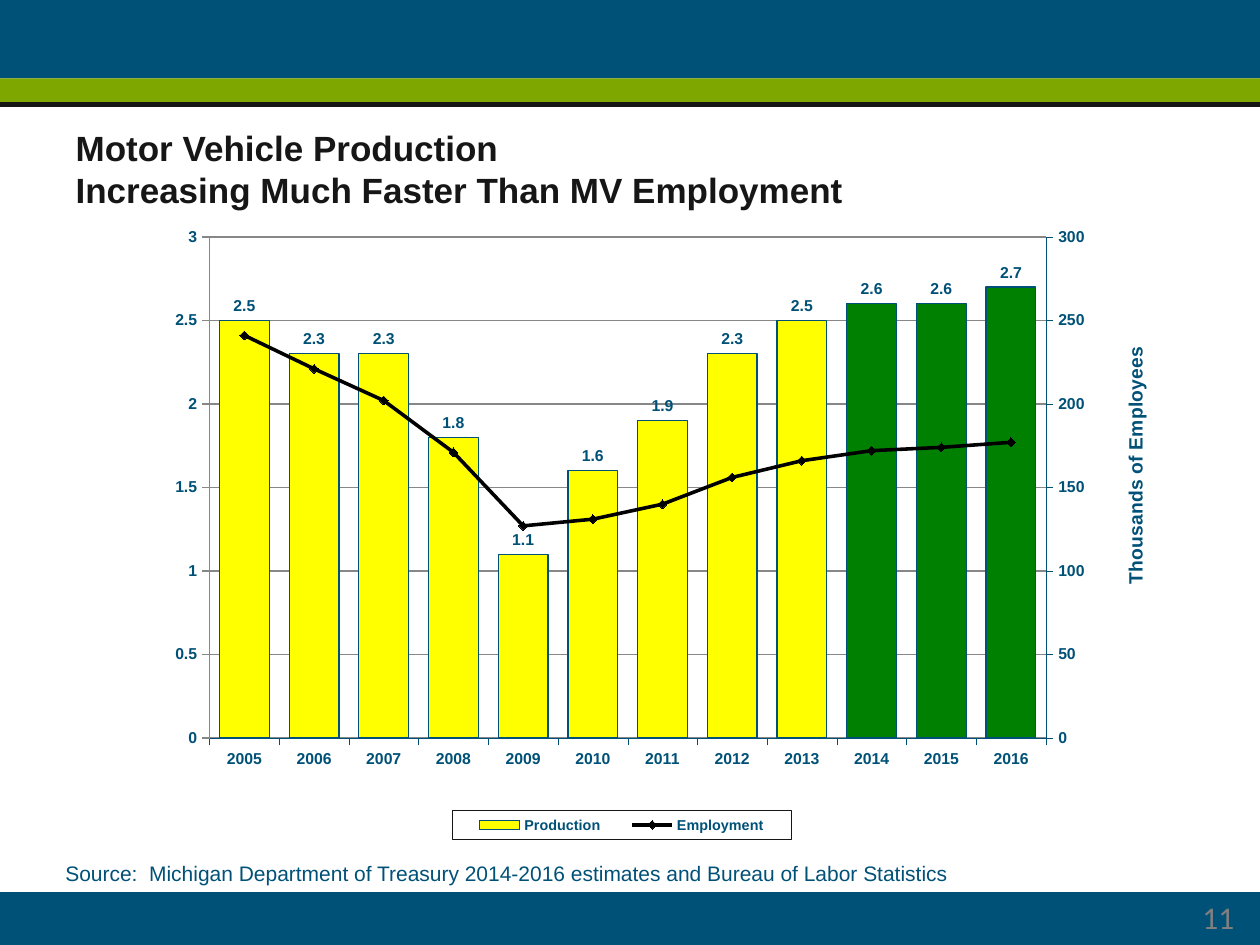
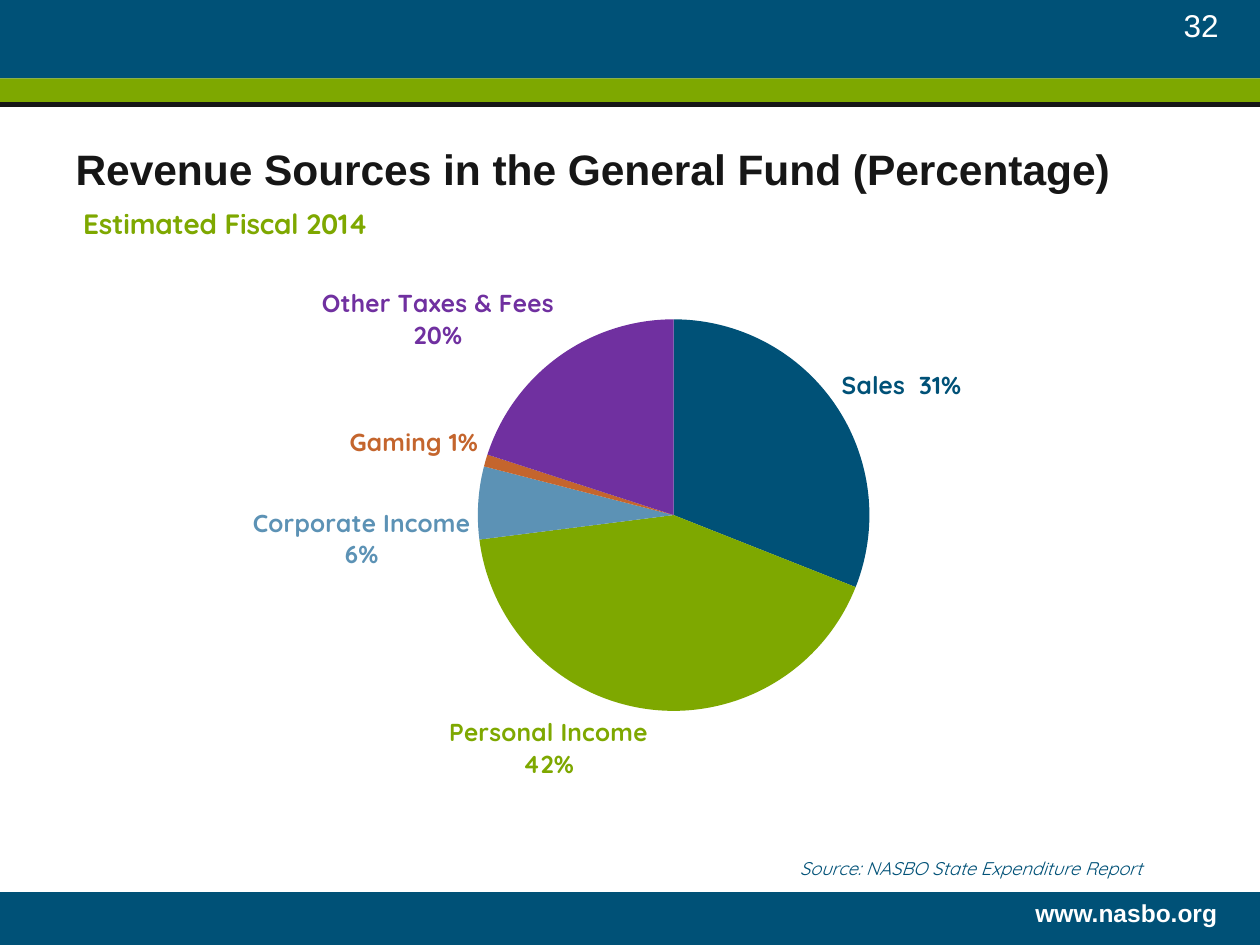
from collections import namedtuple

from pptx import Presentation
from pptx import util as u
from pptx.chart.axis import ValueAxis
from pptx.chart.data import CategoryChartData
from pptx.dml.color import RGBColor
from pptx.enum import chart as ch, shapes, text
from pptx.oxml import parse_xml
from pptx.oxml.ns import nsdecls, qn

COLUMNS, ROWS = 100, 75
NAVY, GREEN, INK, WHITE = "005177", "7EA800", "161616", "FFFFFF"
YELLOW, FOREST, BLACK, GREY = "FFFF00", "008000", "000000", "808080"
RIGHT_AXIS_IDS = (50010, 50020)

Box = namedtuple("Box", "col row cols rows")
HEADER = Box(0, 0, COLUMNS, 8.3)
FOOTER = Box(0, 70.8, COLUMNS, 4.2)
TITLE = Box(5, 9.2, 90, 8.3)

YEARS = [str(year) for year in range(2005, 2017)]
PRODUCTION = [2.5, 2.3, 2.3, 1.8, 1.1, 1.6, 1.9, 2.3, 2.5, 2.6, 2.6, 2.7]
EMPLOYMENT = [241, 221, 202, 171, 127, 131, 140, 156, 166, 172, 174, 177]
FIRST_ESTIMATE = YEARS.index("2014")

REVENUES = [
    ("Sales ", 31, NAVY),
    ("Personal Income", 42, GREEN),
    ("Corporate Income", 6, "5C92B5"),
    ("Gaming", 1, "C4652D"),
    ("Other Taxes & Fees", 20, "7030A0"),
]


def rgb(code):
    """Turn a hex string into a colour."""
    return RGBColor.from_string(code)


def emu(box):
    """Turn a box in grid cells into lengths of the 10 by 7.5 inch slide."""
    return [u.Inches(cells * 10 / COLUMNS) for cells in box]


def set_font(font, size, color, face="Arial", bold=False, italic=False):
    """Format any font object."""
    font.size, font.name = u.Pt(size), face
    font.bold, font.italic = bold, italic
    font.color.rgb = rgb(color)


def write(frame, words, align="LEFT", anchor="TOP", **style):
    """Fill a text frame with one formatted paragraph."""
    frame.word_wrap = True
    frame.auto_size = text.MSO_AUTO_SIZE.NONE
    frame.vertical_anchor = getattr(text.MSO_ANCHOR, anchor)
    paragraph = frame.paragraphs[0]
    paragraph.text = words
    paragraph.alignment = getattr(text.PP_ALIGN, align)
    for run in paragraph.runs:
        set_font(run.font, **style)


def add_words(slide, box, words, **style):
    """Add a text box on the grid."""
    write(slide.shapes.add_textbox(*emu(box)).text_frame, words, **style)


def add_band(slide, box, color):
    """Add a plain filled band."""
    band = slide.shapes.add_shape(shapes.MSO_SHAPE.RECTANGLE, *emu(box))
    band.shadow.inherit = False
    band.fill.solid()
    band.fill.fore_color.rgb = rgb(color)
    band.line.fill.background()
    return band


def add_rule(slide, box, color, width):
    """Draw a line along the bottom edge of a box."""
    left, top, length, height = emu(box)
    bottom = top + height
    rule = slide.shapes.add_connector(
        shapes.MSO_CONNECTOR.STRAIGHT, left, bottom, left + length, bottom)
    rule.line.color.rgb = rgb(color)
    rule.line.width = u.Pt(width)
    rule._element.spPr.append(parse_xml(f"<a:effectLst {nsdecls('a')}/>"))
    return rule


def dress_layout(prs, layout, slide):
    """Give the layout its title style, bands and rule."""
    style = prs.slide_master.element.xpath("p:txStyles/p:titleStyle/a:lvl1pPr")[0]
    style.set("algn", "l")
    style.find(qn("a:defRPr")).set("sz", "2000")
    heading, *extras = list(layout.placeholders)
    heading.left, heading.top, heading.width, heading.height = emu(TITLE)
    for extra in extras:
        extra._element.getparent().remove(extra._element)
    green_rows = HEADER.rows / 4
    blue_rows = HEADER.rows - green_rows
    parts = [
        add_band(slide, HEADER._replace(rows=blue_rows), NAVY),
        add_band(slide, HEADER._replace(row=blue_rows, rows=green_rows), GREEN),
        add_band(slide, FOOTER, NAVY),
        add_rule(slide, HEADER, INK, 3),
    ]
    for part in parts:
        layout.shapes._spTree.append(part._element)


def set_title(slide, words, size):
    """Write the slide title."""
    write(slide.shapes.title.text_frame, words, anchor="MIDDLE",
          size=size, color=INK, bold=True)


def place(element, index, edge=True, inner=False, **percents):
    """Lay out a chart part by percentages of the chart."""
    for old in element.findall(qn("c:layout")):
        element.remove(old)
    rules = [("layoutTarget", "inner")] if inner else []
    if edge:
        rules += [("xMode", "edge"), ("yMode", "edge")]
    rules += [(key, percent / 100) for key, percent in percents.items()]
    body = "".join(f'<c:{key} val="{value}"/>' for key, value in rules)
    element.insert(index, parse_xml(
        f"<c:layout {nsdecls('c')}><c:manualLayout>{body}</c:manualLayout></c:layout>"))


def add_chart(slide, kind, box, categories, **series):
    """Add a chart whose series are given by name."""
    data = CategoryChartData()
    data.categories = categories
    for name, values in series.items():
        data.add_series(name.replace("_", " "), values)
    return slide.shapes.add_chart(kind, *emu(box), data).chart


def style_axis(axis):
    """Give an axis its ticks, line and labels."""
    axis.has_major_gridlines = False
    axis.major_tick_mark = ch.XL_TICK_MARK.OUTSIDE
    axis.minor_tick_mark = ch.XL_TICK_MARK.NONE
    axis.format.line.color.rgb = rgb(NAVY)
    axis.format.line.width = u.Pt(0.17)
    set_font(axis.tick_labels.font, 9, NAVY, bold=True)


def scale_axis(axis, name, top, step, number_format, x, y):
    """Scale a value axis and set its upright title."""
    style_axis(axis)
    axis.minimum_scale, axis.maximum_scale, axis.major_unit = 0, top, step
    axis.tick_labels.number_format = number_format
    axis.tick_labels.number_format_is_linked = False
    frame = axis.axis_title.text_frame
    frame.text = name
    set_font(frame.paragraphs[0].runs[0].font, 11, NAVY, bold=True)
    frame._txBody.bodyPr.set("rot", "-5400000")
    frame._txBody.bodyPr.set("vert", "horz")
    place(axis.axis_title._element, 1, x=x, y=y)


def move_to_right_axis(chart):
    """Turn the second series into a line on a right axis, which is returned."""
    category_id, value_id = RIGHT_AXIS_IDS
    area = chart._chartSpace.chart.plotArea
    bars = area.find(qn("c:barChart"))
    series = bars.findall(qn("c:ser"))[1]
    for flag in series.findall(qn("c:invertIfNegative")):
        series.remove(flag)
    line = parse_xml(
        f'<c:lineChart {nsdecls("c")}><c:grouping val="standard"/><c:varyColors val="0"/>'
        f'<c:marker val="1"/><c:axId val="{category_id}"/><c:axId val="{value_id}"/>'
        '</c:lineChart>')
    line.insert(2, series)
    bars.addnext(line)

    def axis_xml(tag, own, other, hidden, side, crosses):
        """Build one axis of the second pair."""
        return parse_xml(
            f'<c:{tag} {nsdecls("c")}><c:axId val="{own}"/>'
            '<c:scaling><c:orientation val="minMax"/></c:scaling>'
            f'<c:delete val="{hidden}"/><c:axPos val="{side}"/>'
            '<c:tickLblPos val="nextTo"/>'
            f'<c:crossAx val="{other}"/><c:crosses val="{crosses}"/></c:{tag}>')

    right = axis_xml("valAx", value_id, category_id, 0, "r", "max")
    area.findall(qn("c:valAx"))[-1].addnext(right)
    right.addnext(axis_xml("catAx", category_id, value_id, 1, "b", "autoZero"))
    return ValueAxis(right)


def style_bars(plot):
    """Format the production bars and their labels."""
    plot.gap_width, plot.vary_by_categories = 40, False
    production = plot.series[0]
    estimates = [production.points[i] for i in range(FIRST_ESTIMATE, len(YEARS))]
    for bar, color in [(production, YELLOW)] + [(bar, FOREST) for bar in estimates]:
        bar.format.fill.solid()
        bar.format.fill.fore_color.rgb = rgb(color)
        bar.format.line.color.rgb = rgb(NAVY)
        bar.format.line.width = u.Pt(0.68)
    labels = production.data_labels
    labels.show_value = True
    labels.number_format, labels.number_format_is_linked = "0.0", False
    labels.position = ch.XL_LABEL_POSITION.OUTSIDE_END
    set_font(labels.font, 9, NAVY, bold=True)


def style_line(employment):
    """Format the employment line and its diamonds."""
    employment.smooth = False
    employment.format.line.color.rgb = rgb(BLACK)
    employment.format.line.width = u.Pt(2.03)
    marker = employment.marker
    marker.style, marker.size = ch.XL_MARKER_STYLE.DIAMOND, 5
    marker.format.fill.solid()
    marker.format.fill.fore_color.rgb = rgb(BLACK)
    marker.format.line.color.rgb = rgb(BLACK)


def style_legend(chart):
    """Frame the legend under the plot."""
    chart.has_legend = True
    legend = chart.legend
    legend.position = ch.XL_LEGEND_POSITION.BOTTOM
    legend.include_in_layout = False
    set_font(legend.font, 8.2, NAVY, bold=True)
    place(legend._element, 1, x=33.7, y=95, w=31.2, h=4.7)
    legend._element.find(qn("c:txPr")).addprevious(parse_xml(
        f'<c:spPr {nsdecls("c", "a")}><a:ln w="6350"><a:solidFill>'
        f'<a:srgbClr val="{INK}"/></a:solidFill></a:ln></c:spPr>'))


def production_chart(slide, box):
    """Draw production as bars and employment as a line."""
    chart = add_chart(slide, ch.XL_CHART_TYPE.COLUMN_CLUSTERED, box, YEARS,
                      Production=PRODUCTION, Employment=EMPLOYMENT)
    chart.has_title = False
    set_font(chart.font, 9, NAVY, bold=True)
    right_axis = move_to_right_axis(chart)
    bars, line = chart.plots
    style_bars(bars)
    style_line(line.series[0])
    style_axis(chart.category_axis)
    scale_axis(chart.value_axis, "Millions of Units", 3, 0.5, "0.0", 3.2, 31)
    scale_axis(right_axis, "Thousands of Employees", 300, 50, "0", 95.1, 21)
    style_legend(chart)
    place(chart._chartSpace.chart.plotArea, 0, inner=True, x=11.3, y=4.2, w=77.1, h=79.4)


def label_slice(revenue, color):
    """Show a slice's name and percentage in its colour."""
    revenue.format.fill.solid()
    revenue.format.fill.fore_color.rgb = rgb(color)
    set_font(revenue.data_label.font, 14, color, face="Quicksand", bold=True)
    revenue.data_label.position = ch.XL_LABEL_POSITION.OUTSIDE_END


def revenue_chart(slide, box):
    """Draw the revenue shares as a pie."""
    names, shares, colors = zip(*REVENUES)
    chart = add_chart(slide, ch.XL_CHART_TYPE.PIE, box, names, Estimated_Fiscal_2014=shares)
    chart.has_legend = False
    set_font(chart.font, 16, NAVY, face="Quicksand", bold=True)
    write(chart.chart_title.text_frame, "Estimated Fiscal 2014",
          size=16, color=GREEN, face="Quicksand", bold=True)
    place(chart.chart_title._element, 1, x=4, y=1.5)
    chart.plots[0].vary_by_categories = True
    series = chart.plots[0].series[0]
    for index, color in enumerate(colors):
        label_slice(series.points[index], color)
    labels = series._element.xpath("c:dLbls/c:dLbl")
    for label in labels:
        for flag, shown in (("Val", 0), ("CatName", 1), ("Percent", 1)):
            label.find(qn(f"c:show{flag}")).set("val", str(shown))
        label.append(parse_xml(f'<c:separator {nsdecls("c")}> </c:separator>'))
    place(labels[names.index("Corporate Income")], 1, edge=False, x=0, y=6)
    place(chart._chartSpace.chart.plotArea, 0, inner=True, x=38.3, y=21.4, w=33.6, h=64.4)


def production_slide(slide):
    """Fill the slide on vehicle production."""
    set_title(slide, "Motor Vehicle Production\vIncreasing Much Faster Than MV Employment", 20)
    production_chart(slide, Box(6.9, 16.7, 86.1, 50.1))
    add_words(slide, Box(4.2, 67.8, 88.6, 3),
              "Source:  Michigan Department of Treasury 2014-2016 estimates"
              " and Bureau of Labor Statistics", anchor="MIDDLE", size=12, color=NAVY)
    add_words(slide, Box(94.2, FOOTER.row, 5, 3.2), "11", align="CENTER",
              size=18, color=GREY, face="Calibri")


def revenue_slide(slide):
    """Fill the slide on revenue sources."""
    set_title(slide, "Revenue Sources in the General Fund (Percentage)", 24.3)
    revenue_chart(slide, Box(2.5, 15, 92.5, 48.3))
    add_words(slide, Box(75.9, FOOTER.row, 21.7, 4.1), "www.nasbo.org",
              align="RIGHT", size=14, color=WHITE, bold=True)
    add_words(slide, Box(62.5, 67.5, 32.5, 2.9), "Source: NASBO State Expenditure Report",
              size=10.5, color=NAVY, face="Quicksand", italic=True)
    add_words(slide, Box(89.4, 0, 8.3, 4), "32", align="RIGHT", anchor="BOTTOM",
              size=18, color=WHITE)


def main():
    """Build and save the deck."""
    prs = Presentation()
    prs.slide_width, prs.slide_height = emu((COLUMNS, ROWS))
    layout = prs.slide_layouts[5]
    production, revenue = [prs.slides.add_slide(layout) for _ in range(2)]
    dress_layout(prs, layout, production)
    production_slide(production)
    revenue_slide(revenue)
    prs.save("out.pptx")


if __name__ == "__main__":
    main()
